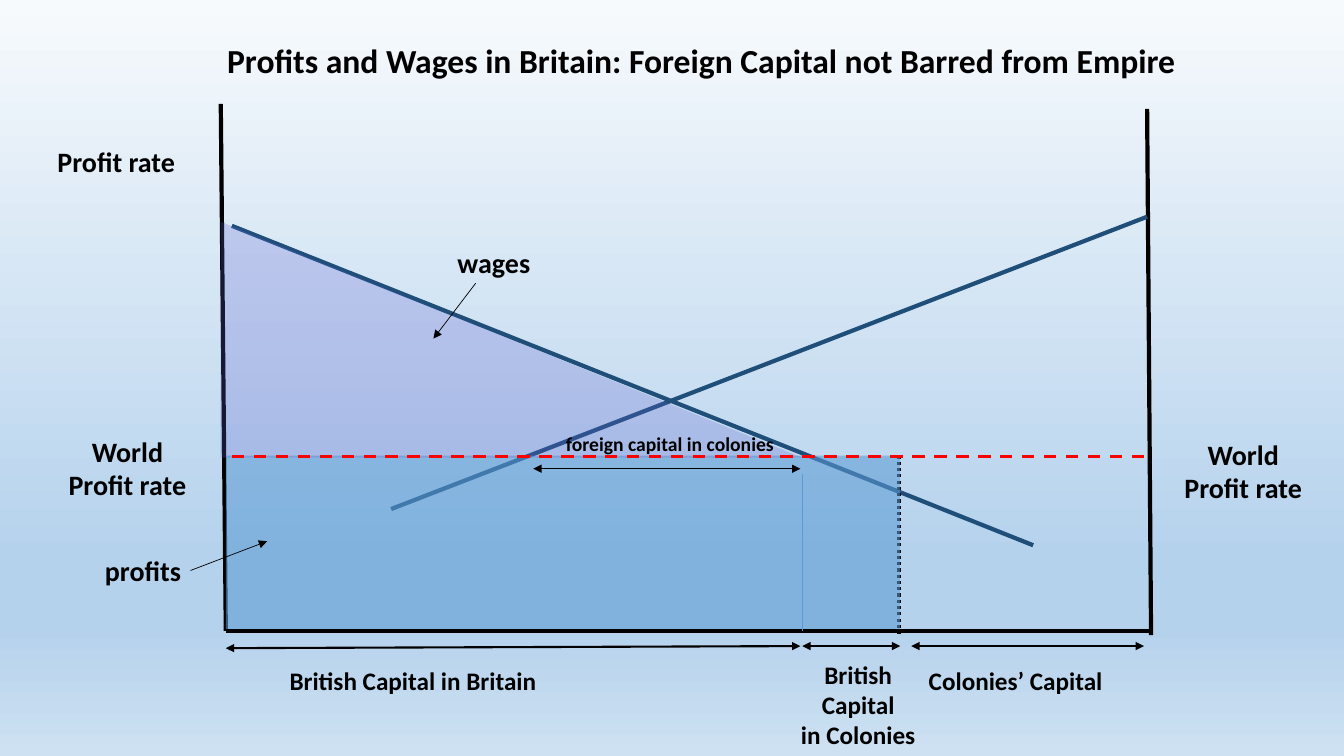
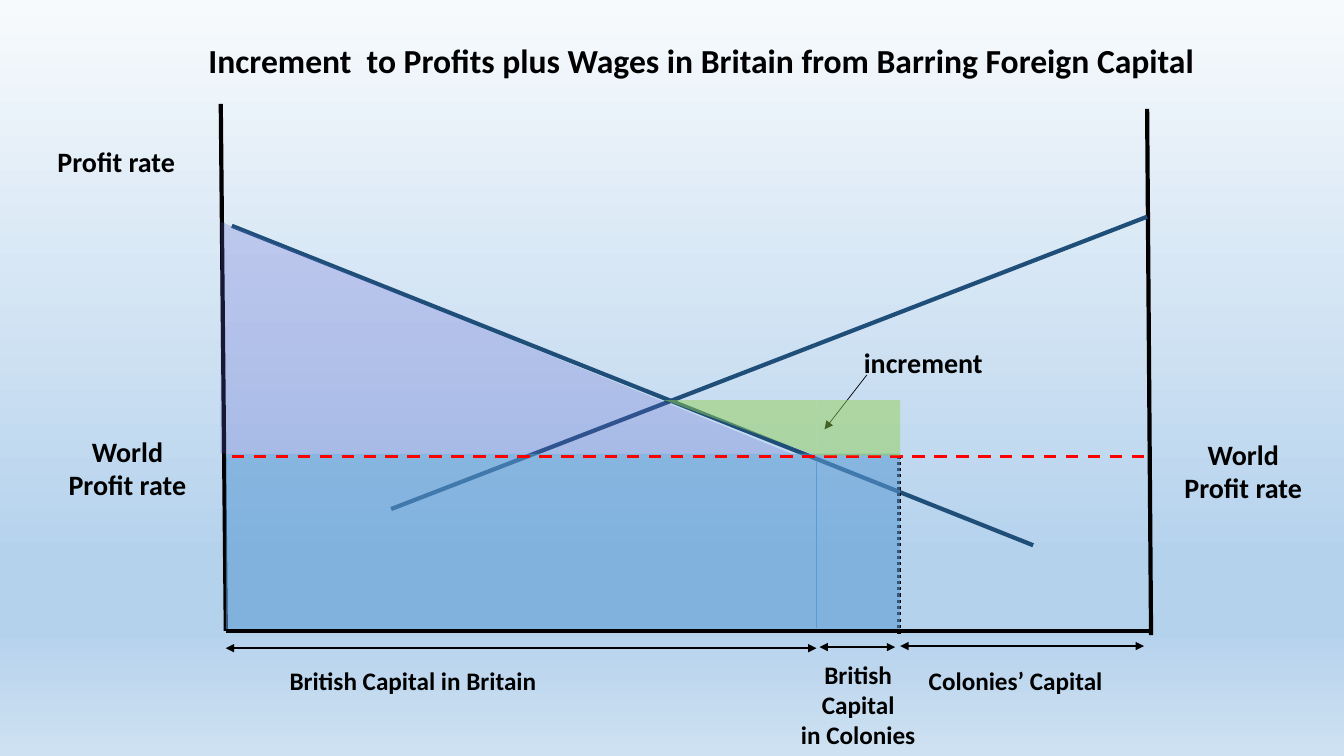
from lxml import etree
from pptx import Presentation
from pptx.dml.color import RGBColor
from pptx.enum.dml import MSO_LINE
from pptx.enum.shapes import MSO_CONNECTOR, MSO_SHAPE
from pptx.enum.text import PP_ALIGN
from pptx.oxml.ns import qn
from pptx.util import Pt

STRAIGHT = MSO_CONNECTOR.STRAIGHT
RECT, TRIANGLE = MSO_SHAPE.RECTANGLE, MSO_SHAPE.RIGHT_TRIANGLE
DASH, DOT = MSO_LINE.DASH, MSO_LINE.ROUND_DOT
CENTER = PP_ALIGN.CENTER

FONT = "Calibri"
COLORS = {
    "ink": "000000", "curve": "1F4E79", "world": "FF0000", "profits": "5B9BD5",
    "wages": "5F62D1", "increment": "92D050",
}
BACKGROUND = [(0, "F7FAFD"), (74, "B5D2EC"), (83, "B5D2EC"), (100, "CEE1F2")]

# Lines: x1, y1, x2, y2
AXES = [
    (157.7, 74.2, 161.3, 450.7),
    (161.3, 450.7, 820.8, 450.7),
    (819.4, 77.8, 822.2, 453.6),
]
CURVES = [(165.6, 161.3, 738, 389.5), (279.4, 363.6, 819.4, 154.8)]
COLONIES_EDGE = (642.2, 325.4, 642.2, 453.6)
WORLD_RATE = (165.6, 326.2, 822.2, 326.2)

# Labels: text, centre x, top, width, height, size
LABELS = [
    ("Profit rate", 83, 99.4, 140, 32, 20),
    ("World\nProfit rate", 91, 306.7, 140, 55, 20),
    ("World\nProfit rate", 888, 308.9, 140, 55, 20),
    ("British Capital in Britain", 295, 471.6, 264, 51, 18),
    ("British\nCapital\nin Colonies", 613, 467.3, 173, 72, 18),
    ("Colonies’ Capital", 725.5, 471.6, 197, 51, 18),
]

# Areas: shape, colour, opacity in %, left, top, width, height, rotation
SLIDES = [
    {
        "title": "Profits and Wages in Britain: Foreign Capital not Barred from Empire",
        "spans": [
            (161.3, 463, 571.7, 461.5),
            (573.1, 461.5, 643, 461.5),
            (650.9, 461.5, 817.2, 461.5),
        ],
        "areas": [
            (RECT, "profits", 57, 161.3, 325.4, 481.7, 123.8, 0),
            (TRIANGLE, "wages", 25, 157.7, 158.4, 415.4, 168.5, 0),
        ],
        "split": (573.1, 338.4, 573.1, 450.7),
        "pointers": [(339.8, 202.3, 309.6, 241.9), (136.1, 407.5, 190.8, 386.6)],
        "foreign": [(380.9, 334.8, 571.7, 334.8)],
        "overlays": [],
        "labels": [
            ("wages", 352.8, 172.1, 163, 32, 20),
            ("profits", 102.2, 391.7, 163, 32, 20),
            ("foreign capital in colonies", 478.6, 305, 180, 25, 14),
        ],
    },
    {
        "title": "Increment  to Profits plus Wages in Britain from Barring Foreign Capital",
        "spans": [
            (161.3, 463, 583.2, 463),
            (585.4, 462.2, 639.4, 462.2),
            (643, 461.5, 817.2, 461.5),
        ],
        "areas": [
            (RECT, "profits", 57, 161.3, 324, 481.7, 125.3, 0),
            (TRIANGLE, "wages", 25, 157.7, 158.4, 407.5, 165.6, 0),
        ],
        "split": (583.2, 329.8, 583.2, 448.6),
        "pointers": [(619.2, 267.8, 589, 306.7)],
        "foreign": [],
        "overlays": [
            (TRIANGLE, "increment", 48, 474.5, 285.8, 108.7, 39.6, 180),
            (RECT, "increment", 48, 583.2, 285.8, 59.8, 39.6, 0),
        ],
        "labels": [("increment", 659.5, 243.4, 163, 32, 20)],
    },
]


def add_line(s, ends, color, width, dash=None, arrows=()):
    """Draw a straight line; arrows lists the ends ("head", "tail") with a triangle."""
    c = s.shapes.add_connector(STRAIGHT, *[Pt(v) for v in ends])
    c.line.color.rgb = RGBColor.from_string(COLORS[color])
    c.line.width = Pt(width)
    if dash:
        c.line.dash_style = dash
    ln = c.line._get_or_add_ln()
    for end in arrows:
        etree.SubElement(ln, qn(f"a:{end}End"), type="triangle")
    etree.SubElement(c._element.spPr, qn("a:effectLst"))


def add_area(s, shape, color, opacity, left, top, width, height, rotation):
    sp = s.shapes.add_shape(shape, Pt(left), Pt(top), Pt(width), Pt(height))
    sp.rotation = rotation
    sp.shadow.inherit = False
    sp.line.fill.background()
    sp.fill.solid()
    sp.fill.fore_color.rgb = RGBColor.from_string(COLORS[color])
    clr = sp._element.spPr.find(".//" + qn("a:srgbClr"))
    etree.SubElement(clr, qn("a:alpha"), val=str(opacity * 1000))


prs = Presentation()
prs.slide_width, prs.slide_height = Pt(960), Pt(540)

# Shared background: vertical gradient on the master
master = prs.slide_master
fill = master.background.fill
fill.gradient()
fill.gradient_angle = 270
stops = master._element.find(".//" + qn("a:gsLst"))
for gs in list(stops):
    stops.remove(gs)
for pos, color in BACKGROUND:
    gs = etree.SubElement(stops, qn("a:gs"), pos=str(pos * 1000))
    etree.SubElement(gs, qn("a:srgbClr"), val=color)

for data in SLIDES:
    s = prs.slides.add_slide(prs.slide_layouts[6])

    for ends in AXES:
        add_line(s, ends, "ink", 3)
    for ends in CURVES:
        add_line(s, ends, "curve", 3)
    add_line(s, COLONIES_EDGE, "ink", 2.25, DOT)
    for ends in data["spans"]:
        add_line(s, ends, "ink", 1.5, arrows=("head", "tail"))

    for area in data["areas"]:
        add_area(s, *area)
    add_line(s, WORLD_RATE, "world", 2.25, DASH)
    add_line(s, data["split"], "profits", 0.5)
    for ends in data["pointers"]:
        add_line(s, ends, "ink", 0.5, arrows=("tail",))
    for ends in data["foreign"]:
        add_line(s, ends, "ink", 0.75, arrows=("head", "tail"))
    for area in data["overlays"]:
        add_area(s, *area)

    title = (data["title"], 501, 25.2, 775, 36, 24)
    for text, center, top, width, height, size in [title] + LABELS + data["labels"]:
        box = s.shapes.add_textbox(Pt(center - width / 2), Pt(top), Pt(width), Pt(height))
        tf = box.text_frame
        tf.word_wrap = True
        for i, words in enumerate(text.split("\n")):
            p = tf.add_paragraph() if i else tf.paragraphs[0]
            p.alignment = CENTER
            r = p.add_run()
            r.text = words
            r.font.name = FONT
            r.font.size = Pt(size)
            r.font.bold = True
            r.font.color.rgb = RGBColor.from_string(COLORS["ink"])

prs.save("out.pptx")
